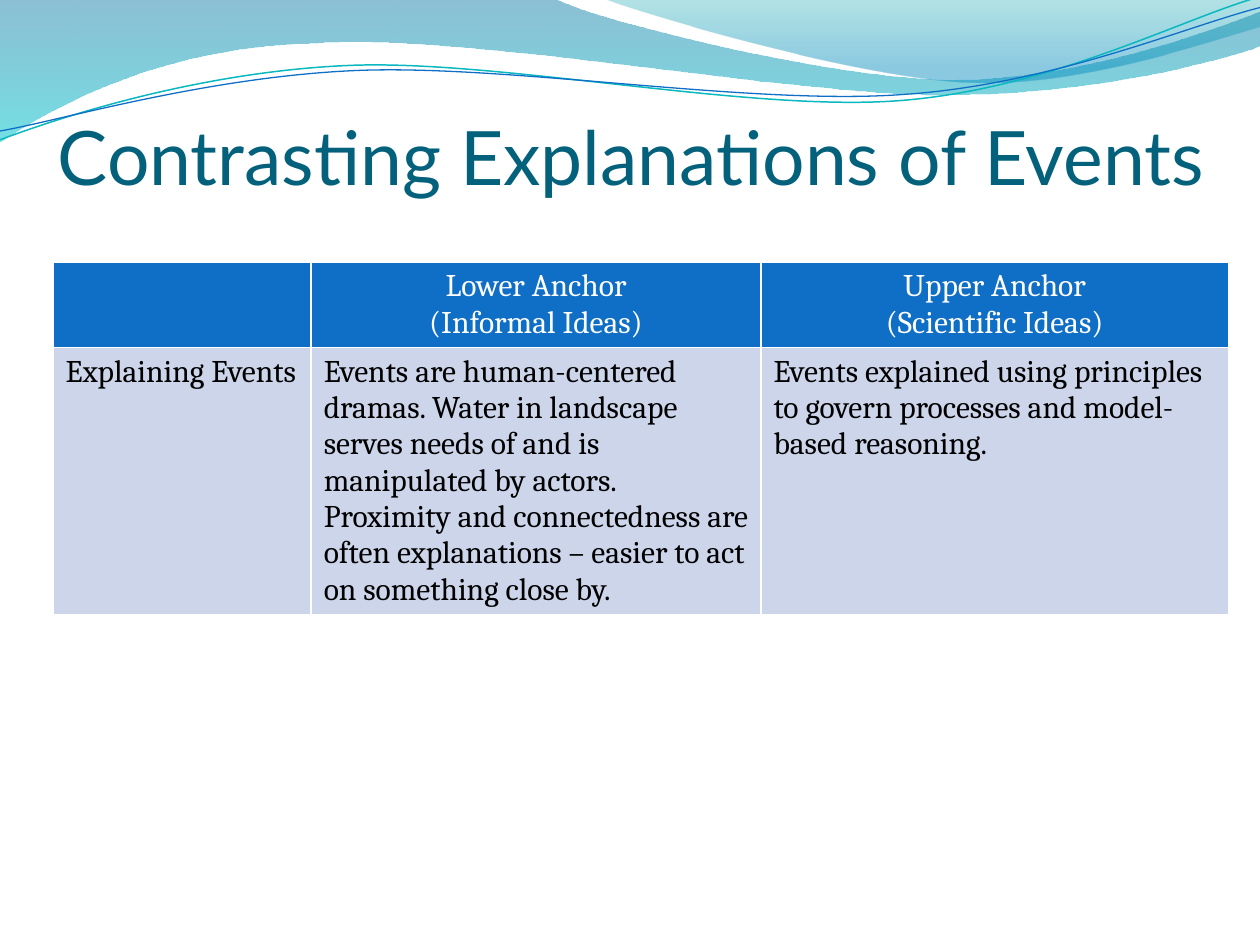
from lxml import etree
from pptx import Presentation
from pptx import util as u
from pptx.dml.color import RGBColor
from pptx.enum import text
from pptx.oxml.ns import qn

WHITE, BLACK, BLUE, PALE = "FFFFFF", "000000", "0F6FC6", "CCD5EA"


def color(hex_code):
    return RGBColor.from_string(hex_code)


def add_wave(start, segments, closed):
    """Draw a freeform; 2 numbers are a straight segment, 6 a cubic Bézier, in inches."""
    builder = slide.shapes.build_freeform(u.Inches(start[0]), u.Inches(start[1]))
    ends = [(u.Inches(seg[-2]), u.Inches(seg[-1])) for seg in segments]
    builder.add_line_segments(ends, close=closed)
    wave = builder.convert_to_shape()
    wave.shadow.inherit = False
    # Turn the straight pieces that have control points into curves
    pieces = list(wave._element.spPr.iter(qn("a:lnTo")))
    for piece, seg in zip(pieces, segments):
        if len(seg) == 6:
            curve = etree.Element(qn("a:cubicBezTo"))
            for x, y in zip(seg[::2], seg[1::2]):
                etree.SubElement(curve, qn("a:pt"), x=str(u.Inches(x) - wave.left),
                                 y=str(u.Inches(y) - wave.top))
            piece.getparent().replace(piece, curve)
    return wave


prs = Presentation()
prs.slide_width, prs.slide_height = u.Inches(10), u.Inches(7.5)
slide = prs.slides.add_slide(prs.slide_layouts[6])

# Translucent waves: start, segments, gradient stops (position, colour, opacity %)
bands = [
    ((0, 0),
     [(4.4, -0.01), (4.76, 0.17, 6.64, 0.63, 7.58, 0.63),
      (8.53, 0.63, 9.58, 0.26, 10, 0.09), (10.01, 0.36),
      (9.83, 0.44, 8.7, 0.76, 7.46, 0.75), (6.22, 0.75, 3.82, 0.28, 2.57, 0.34),
      (1.29, 0.36, 0.46, 0.83, -0.01, 1.13)],
     [(0, "0074A1", 45), (1, "00C6CF", 55)]),
    ((4.79, -0.01),
     [(5.09, 0.11, 6.82, 0.62, 7.69, 0.65), (8.56, 0.69, 9.61, 0.32, 10, 0.21), (10, 0)],
     [(0, "00A1A9", 30), (0.8, "008BBF", 45)]),
]
for start, segments, stops in bands:
    band = add_wave(start, segments, closed=True)
    band.line.fill.background()
    band.fill.gradient()
    band.fill.gradient_angle = 270
    for stop, (position, shade, _) in zip(band.fill.gradient_stops, stops):
        stop.position = position
        stop.color.rgb = color(shade)
    for tint, (_, _, opacity) in zip(band._element.spPr.iter(qn("a:srgbClr")), stops):
        etree.SubElement(tint, qn("a:alpha"), val=str(opacity * 1000))

# Thin wave lines: start, segments, colour, width
strands = [
    ((0, 1.11),
     [(0.48, 0.93, 1.58, 0.57, 2.77, 0.52), (3.95, 0.47, 5.93, 0.89, 7.13, 0.8),
      (8.33, 0.71, 9.38, 0.15, 9.98, -0.02)], "0AB8BF", 0.85),
    ((0, 1.04),
     [(0.47, 0.96, 1.64, 0.61, 2.83, 0.56), (4.03, 0.51, 5.97, 0.84, 7.17, 0.75),
      (8.36, 0.67, 9.41, 0.21, 10, 0.06)], BLUE, 0.75),
]
for start, segments, shade, width in strands:
    strand = add_wave(start, segments, closed=False)
    strand.fill.background()
    strand.line.color.rgb = color(shade)
    strand.line.width = u.Pt(width)

# Comparison table; its white rules come from the default table style
rows = [
    ["", "Lower Anchor\n(Informal Ideas)", "Upper Anchor\n(Scientific Ideas)"],
    ["Explaining Events",
     "Events are human-centered dramas. Water in landscape serves needs of and is "
     "manipulated by actors. Proximity and connectedness are often explanations – "
     "easier to act on something close by.",
     "Events explained using principles to govern processes and model-based reasoning."],
]
row_styles = [
    {"fill": BLUE, "ink": WHITE, "align": text.PP_ALIGN.CENTER, "height": 0.67},
    {"fill": PALE, "ink": BLACK, "align": text.PP_ALIGN.LEFT, "height": 2.11},
]
cell_font = {"size": u.Pt(18), "name": "Cambria", "bold": False}
anchors = slide.shapes.add_table(2, 3, u.Inches(0.42), u.Inches(2.08),
                                 u.Inches(9.33), u.Inches(2.78)).table
for column, width in zip(anchors.columns, [2.05, 3.57, 3.71]):
    column.width = u.Inches(width)
for row, wording, style in zip(anchors.rows, rows, row_styles):
    row.height = u.Inches(style["height"])
    for cell, words in zip(row.cells, wording):
        cell.fill.solid()
        cell.fill.fore_color.rgb = color(style["fill"])
        cell.text = words
        for paragraph in cell.text_frame.paragraphs:
            paragraph.alignment = style["align"]
            for run in paragraph.runs:
                run.font.color.rgb = color(style["ink"])
                for name, value in cell_font.items():
                    setattr(run.font, name, value)

# Title
title = slide.shapes.add_textbox(u.Inches(0), u.Inches(0.42),
                                 u.Inches(10), u.Inches(1.17)).text_frame
title_format = {"word_wrap": True, "vertical_anchor": text.MSO_ANCHOR.BOTTOM,
                "margin_left": u.Inches(0.46), "margin_top": u.Inches(0.05),
                "margin_right": 0, "margin_bottom": 0}
for name, value in title_format.items():
    setattr(title, name, value)
heading = title.paragraphs[0].add_run()
heading.text = "Contrasting Explanations of Events"
heading.font.size = u.Pt(42.9)
heading.font.name = "Lato"
heading.font.color.rgb = color("04617B")

prs.save("out.pptx")
